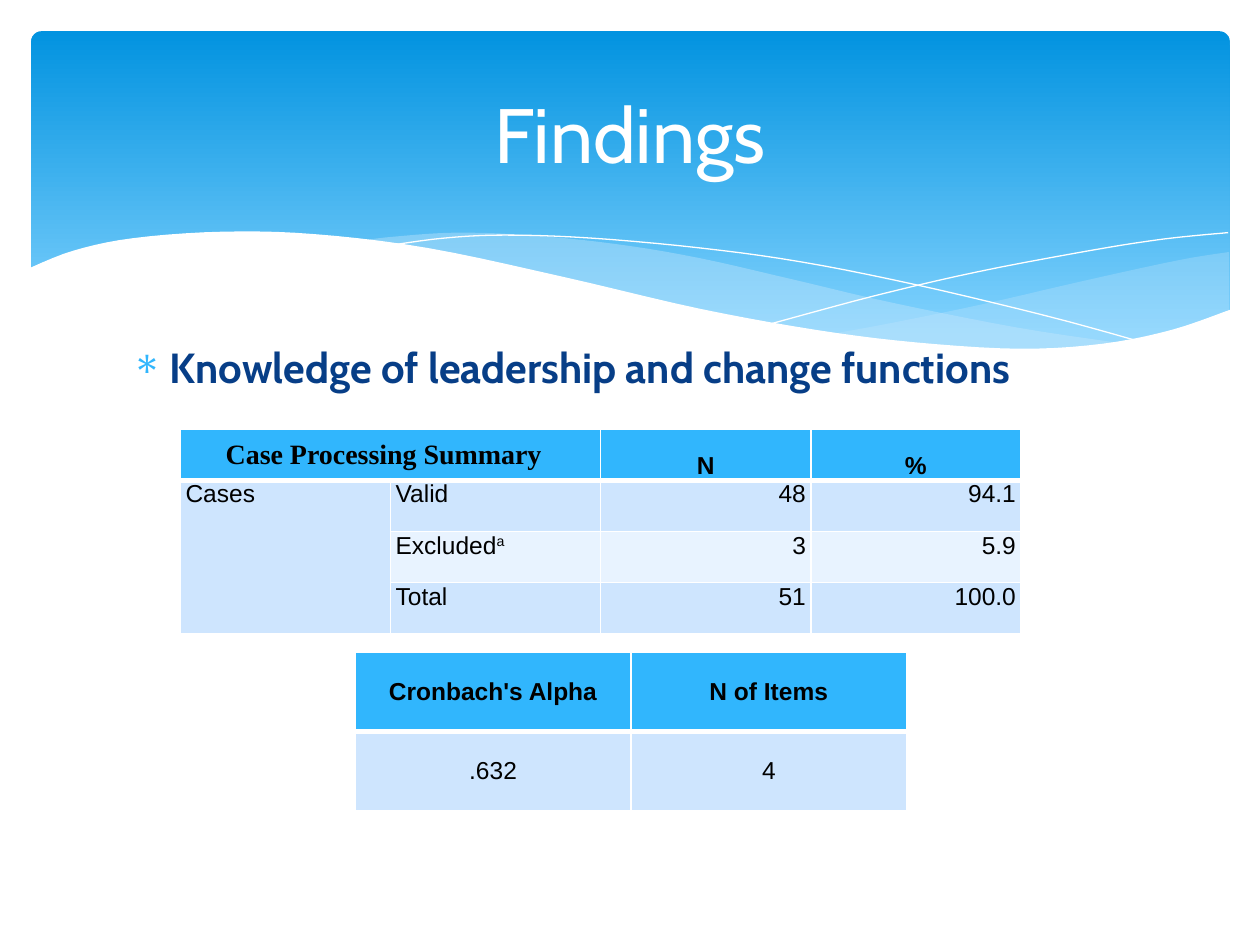
from lxml import etree
from pptx import Presentation
from pptx import util as u
from pptx.dml.color import RGBColor
from pptx.enum import shapes, text
from pptx.oxml.ns import qn

WHITE = RGBColor(0xFF, 0xFF, 0xFF)
BLACK = RGBColor(0x00, 0x00, 0x00)
NAVY = RGBColor(0x07, 0x3E, 0x87)
SKY = RGBColor(0x31, 0xB6, 0xFD)
BANNER_TOP = RGBColor(0x02, 0x93, 0xE0)
BANNER_BOTTOM = RGBColor(0x83, 0xD3, 0xFE)
WAVE = RGBColor(0xC6, 0xE7, 0xFC)
BAND_DARK = RGBColor(0xCE, 0xE5, 0xFE)
BAND_LIGHT = RGBColor(0xE8, 0xF3, 0xFF)

LEFT, CENTER, RIGHT = text.PP_ALIGN.LEFT, text.PP_ALIGN.CENTER, text.PP_ALIGN.RIGHT
TOP, MIDDLE, BOTTOM = (text.MSO_ANCHOR.TOP, text.MSO_ANCHOR.MIDDLE,
                       text.MSO_ANCHOR.BOTTOM)

# Curve knots in centimetres from the banner's top left corner
RIGHT_WAVE_TOP = [(24.15, 4.45), (23.11, 4.62), (21.23, 5.03), (19.15, 5.51),
                  (17.3, 5.89), (16.15, 6.1)]
RIGHT_WAVE_BOTTOM = [(16.15, 6.1), (17.63, 6.27), (19.2, 6.4), (20.57, 6.4),
                     (21.95, 6.27), (23.11, 6.02), (24.15, 5.64)]
MIDDLE_WAVE_TOP = [(22.05, 6.3), (19.86, 5.97), (17.3, 5.46), (15.34, 5), (13.46, 4.57),
                   (11.79, 4.29), (10.03, 4.11), (8.53, 4.06), (7.32, 4.14), (6.63, 4.22)]
MIDDLE_WAVE_BOTTOM = [(6.63, 4.22), (8.56, 4.52), (10.77, 5), (12.83, 5.46), (15.06, 5.92),
                      (17.02, 6.22), (19, 6.4), (20.65, 6.43), (22.05, 6.3)]
FALLING_LINE = [(7.21, 4.32), (8.33, 4.17), (9.55, 4.11), (11.28, 4.17), (13.49, 4.37),
                (15.52, 4.65), (17.83, 5.11), (20.47, 5.74), (22.4, 6.27)]
RISING_LINE = [(14.94, 5.89), (17.02, 5.33), (19.08, 4.85), (21.36, 4.42),
               (22.83, 4.19), (24.13, 4.06)]
WHITE_WAVE = [(-0.05, 4.78), (0.86, 4.42), (2.06, 4.17), (3.86, 4.04), (5.72, 4.09),
              (8, 4.37), (10.72, 4.95), (13.46, 5.59), (15.82, 6.02), (17.81, 6.27),
              (19.91, 6.4), (21.59, 6.3), (22.99, 6.02), (24.18, 5.61)]
WHITE_CORNERS = [(24.18, 7.72), (-0.05, 7.72)]


def smooth(knots, steps=5):
    """Return points on a Catmull-Rom curve through the knots."""
    padded = [knots[0], *knots, knots[-1]]
    points = [knots[0]]
    for a, b, c, d in zip(padded, padded[1:], padded[2:], padded[3:]):
        for step in range(1, steps + 1):
            t = step / steps
            points.append(tuple(
                (2 * q + (r - p) * t + (2 * p - 5 * q + 4 * r - s) * t ** 2
                 + (3 * q - p - 3 * r + s) * t ** 3) / 2
                for p, q, r, s in zip(a, b, c, d)))
    return points


def add_outline(slide, left, top, points, closed):
    corners = [(u.Cm(left + x), u.Cm(top + y)) for x, y in points]
    builder = slide.shapes.build_freeform(*corners[0])
    builder.add_line_segments(corners[1:], close=closed)
    shape = builder.convert_to_shape()
    shape.shadow.inherit = False
    return shape


def add_wave(slide, left, top, points, color, opacity=100):
    shape = add_outline(slide, left, top, points, True)
    shape.fill.solid()
    shape.fill.fore_color.rgb = color
    shape.line.fill.background()
    if opacity < 100:
        color_element = shape.fill._xPr.find(".//" + qn("a:srgbClr"))
        etree.SubElement(color_element, qn("a:alpha"), val=str(opacity * 1000))


def add_hairline(slide, left, top, knots):
    shape = add_outline(slide, left, top, smooth(knots), False)
    shape.fill.background()
    shape.line.color.rgb = WHITE
    shape.line.width = u.Pt(0)


def add_banner(slide, left, top, width, height):
    panel = slide.shapes.add_shape(shapes.MSO_SHAPE.ROUNDED_RECTANGLE, u.Cm(left),
                                   u.Cm(top), u.Cm(width), u.Cm(height))
    panel.adjustments[0] = 0.03
    panel.shadow.inherit = False
    panel.line.fill.background()
    panel.fill.gradient()
    panel.fill.gradient_angle = 270
    stops = [(0, BANNER_TOP), (0.9, BANNER_BOTTOM)]
    for stop, (position, color) in zip(panel.fill.gradient_stops, stops):
        stop.position = position
        stop.color.rgb = color

    add_wave(slide, left, top, smooth(RIGHT_WAVE_TOP) + smooth(RIGHT_WAVE_BOTTOM), WAVE, 29)
    add_wave(slide, left, top, smooth(MIDDLE_WAVE_TOP) + smooth(MIDDLE_WAVE_BOTTOM), WAVE, 40)
    for knots in (FALLING_LINE, RISING_LINE):
        add_hairline(slide, left, top, knots)
    add_wave(slide, left, top, smooth(WHITE_WAVE) + WHITE_CORNERS, WHITE)


def set_font(paragraph, name, size, color, bold=False):
    font = paragraph.font
    font.name, font.size, font.bold = name, u.Pt(size), bold
    font.color.rgb = color


def add_text(slide, left, top, width, height, wording, anchor):
    box = slide.shapes.add_textbox(u.Cm(left), u.Cm(top), u.Cm(width), u.Cm(height))
    frame = box.text_frame
    frame.word_wrap = True
    frame.vertical_anchor = anchor
    paragraph = frame.paragraphs[0]
    paragraph.text = wording
    return paragraph


def add_title(slide, left, top, width, height):
    paragraph = add_text(slide, left, top, width, height, "Findings", MIDDLE)
    paragraph.alignment = CENTER
    set_font(paragraph, "Cabin", 44, WHITE)


def add_bullet(slide, left, top, width, height):
    paragraph = add_text(slide, left, top, width, height,
                         "Knowledge of leadership and change functions", TOP)
    paragraph.space_before = u.Pt(4.8)
    properties = paragraph._p.get_or_add_pPr()
    properties.set("marL", str(u.Cm(0.76)))
    properties.set("indent", str(-u.Cm(0.76)))
    bullet_color = etree.SubElement(properties, qn("a:buClr"))
    etree.SubElement(bullet_color, qn("a:srgbClr"), val=str(SKY))
    etree.SubElement(properties, qn("a:buChar"), char="∗")
    set_font(paragraph, "Cabin", 24, NAVY, True)


def set_borders(cell, bottom_width):
    properties = cell._tc.get_or_add_tcPr()
    for index, side in enumerate("LRTB"):
        width = bottom_width if side == "B" else 1
        line = etree.Element(qn("a:ln" + side), w=str(u.Pt(width)))
        fill = etree.SubElement(line, qn("a:solidFill"))
        etree.SubElement(fill, qn("a:srgbClr"), val=str(WHITE))
        properties.insert(index, line)


def fill_cell(cell, wording, alignment, anchor, bold):
    cell.vertical_anchor = anchor
    paragraph = cell.text_frame.paragraphs[0]
    paragraph.text = wording
    paragraph.alignment = alignment
    paragraph.line_spacing = u.Pt(16)
    for margin in ("marL", "marR"):
        paragraph._p.get_or_add_pPr().set(margin, str(u.Cm(0.1)))
    set_font(paragraph, "Arial", 14, BLACK, bold)


def add_banded_table(slide, left, top, width, height, rows, alignments, anchors):
    """Add a table; anchors holds the header's anchor and the body's."""
    table = slide.shapes.add_table(len(rows), len(rows[0]), u.Cm(left), u.Cm(top),
                                   u.Cm(width), u.Cm(height)).table
    for i, row in enumerate(rows):
        header = i == 0
        for j, wording in enumerate(row):
            cell = table.cell(i, j)
            cell.margin_left = cell.margin_right = cell.margin_top = cell.margin_bottom = 0
            set_borders(cell, 3 if header else 1)
            cell.fill.solid()
            cell.fill.fore_color.rgb = SKY if header else (BAND_LIGHT, BAND_DARK)[i % 2]
            fill_cell(cell, wording, CENTER if header else alignments[j],
                      anchors[0] if header else anchors[1], header)
    return table


def add_case_table(slide, left, top, width, height):
    rows = [("Case Processing Summary", "", "N", "%"),
            ("Cases", "Valid", "48", "94.1"),
            ("", "Excluded", "3", "5.9"),
            ("", "Total", "51", "100.0")]
    table = add_banded_table(slide, left, top, width, height, rows,
                             (LEFT, LEFT, RIGHT, RIGHT), (BOTTOM, TOP))
    heading = table.cell(0, 0)
    heading.merge(table.cell(0, 1))
    heading.vertical_anchor = MIDDLE
    heading.margin_right = u.Cm(0.28)
    paragraph = heading.text_frame.paragraphs[0]
    paragraph.line_spacing = 1.0
    set_font(paragraph, "Times New Roman", 16, BLACK, True)
    table.cell(1, 0).merge(table.cell(3, 0))
    note_mark = table.cell(2, 1).text_frame.paragraphs[0].add_run()
    note_mark.text = "a"
    note_mark._r.get_or_add_rPr().set("baseline", "30000")


def add_alpha_table(slide, left, top, width, height):
    rows = [("Cronbach's Alpha", "N of Items"), (".632", "4")]
    add_banded_table(slide, left, top, width, height, rows,
                     (CENTER, CENTER), (MIDDLE, MIDDLE))


def main():
    presentation = Presentation()
    presentation.slide_width, presentation.slide_height = u.Cm(25.4), u.Cm(19.05)
    slide = presentation.slides.add_slide(presentation.slide_layouts[6])
    add_banner(slide, 0.63, 0.63, 24.16, 6.86)
    add_bullet(slide, 2.41, 6.76, 20.57, 9.58)
    add_title(slide, 1.27, 0.94, 22.86, 3.48)
    add_case_table(slide, 3.64, 8.65, 16.94, 4.12)
    add_alpha_table(slide, 7.16, 13.14, 11.12, 3.2)
    presentation.save("out.pptx")


if __name__ == "__main__":
    main()
